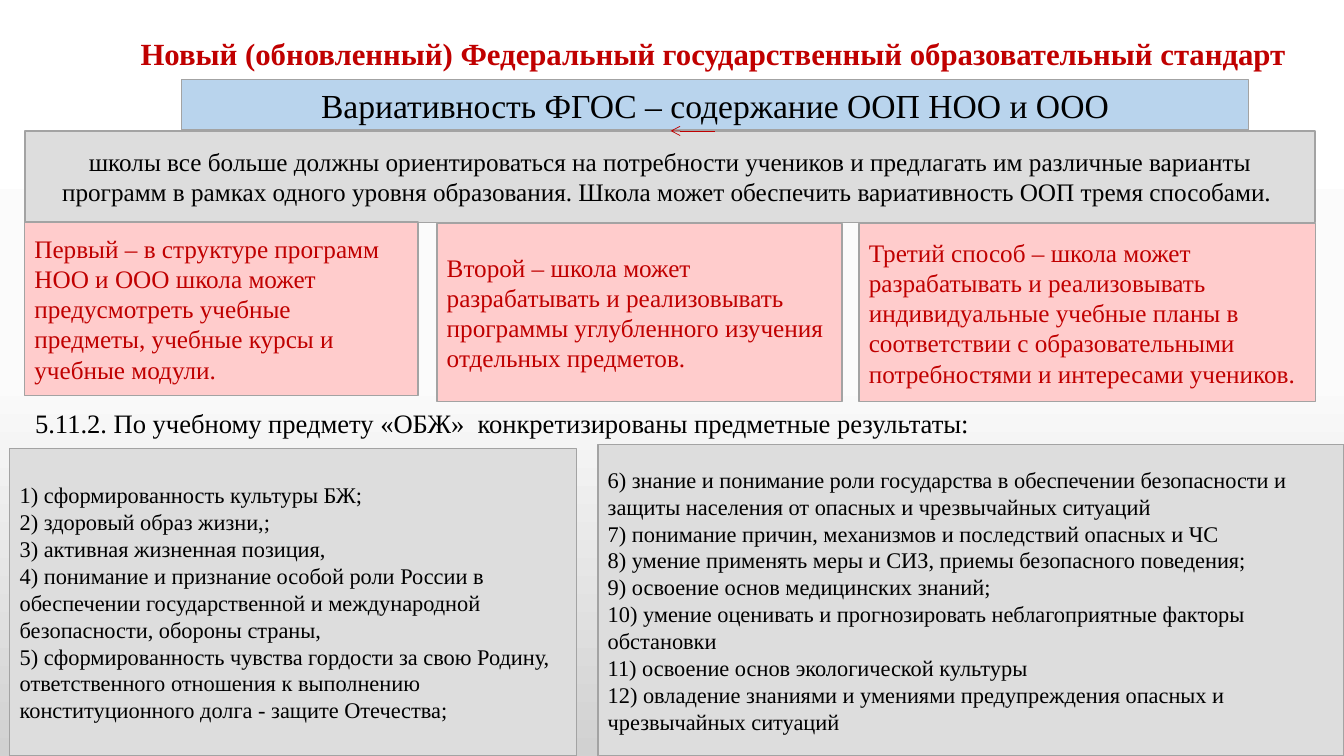
"""Build the slide on variability in the updated federal education standard."""
from copy import deepcopy

from pptx import Presentation
from pptx.dml.color import RGBColor
from pptx.enum.shapes import MSO_CONNECTOR as Connector, MSO_SHAPE as Shape
from pptx.enum.text import MSO_ANCHOR as Anchor, PP_ALIGN as Align
from pptx.oxml.ns import qn
from pptx.util import Pt
from lxml.etree import SubElement

COLORS = {
    "red": "C00000",
    "black": "000000",
    "blue": "B9D4ED",
    "grey": "DDDDDD",
    "pink": "FFCCCC",
    "border": "A3A3A3",
}
BACKGROUND = [(0, "FFFFFF"), (0.5, "FBFBFB"), (1, "D1D1D1")]
FONT = "Times New Roman"


def color(name):
    return RGBColor.from_string(COLORS[name])


def write(box, text, size, ink, align=Align.LEFT, bold=False):
    frame = box.text_frame
    frame.word_wrap = True
    frame.text = text
    for para in frame.paragraphs:
        para.alignment = align
        for span in para.runs:
            span.font.name = FONT
            span.font.size = Pt(size)
            span.font.bold = bold
            span.font.color.rgb = color(ink)


deck = Presentation()
deck.slide_width, deck.slide_height = Pt(960), Pt(540)
page = deck.slides.add_slide(deck.slide_layouts[6])

backdrop = page.background.fill
backdrop.gradient()
backdrop.gradient_angle = 270
stop_list = page.element.find(".//" + qn("a:gsLst"))
stop_list.insert(1, deepcopy(stop_list[0]))
for stop, (position, tint) in zip(backdrop.gradient_stops, BACKGROUND):
    stop.position = position
    stop.color.rgb = RGBColor.from_string(tint)

title = page.shapes.add_textbox(Pt(79), Pt(21), Pt(860.5), Pt(34))
write(title, "Новый (обновленный) Федеральный государственный образовательный стандарт",
      22, "red", Align.CENTER, True)

heading = page.shapes.add_textbox(Pt(18), Pt(287.5), Pt(921), Pt(30))
write(heading, "5.11.2. По учебному предмету «ОБЖ»  конкретизированы предметные результаты:",
      19, "black")

results_left = """1) сформированность культуры БЖ;
2) здоровый образ жизни,;
3) активная жизненная позиция,
4) понимание и признание особой роли России в обеспечении государственной и международной безопасности, обороны страны,
5) сформированность чувства гордости за свою Родину, ответственного отношения к выполнению конституционного долга - защите Отечества;"""
results_right = """6) знание и понимание роли государства в обеспечении безопасности и защиты населения от опасных и чрезвычайных ситуаций
7) понимание причин, механизмов и последствий опасных и ЧС
8) умение применять меры и СИЗ, приемы безопасного поведения;
9) освоение основ медицинских знаний;
10) умение оценивать и прогнозировать неблагоприятные факторы обстановки
11) освоение основ экологической культуры
12) овладение знаниями и умениями предупреждения опасных и чрезвычайных ситуаций"""

panels = [
    (129.5, 57, 762.5, 36, "blue", "black", 24, Align.CENTER,
     "Вариативность ФГОС – содержание ООП НОО и ООО"),
    (18, 93.5, 921.5, 65.5, "grey", "black", 18, Align.CENTER,
     "школы все больше должны ориентироваться на потребности учеников и предлагать им "
     "различные варианты программ в рамках одного уровня образования. Школа может "
     "обеспечить вариативность ООП тремя способами. "),
    (7, 320.5, 405, 219.5, "grey", "black", 16, Align.LEFT, results_left),
    (17.5, 158.5, 281, 124, "pink", "red", 18, Align.LEFT,
     "Первый – в структуре программ НОО и ООО школа может предусмотреть учебные "
     "предметы, учебные курсы и учебные модули."),
    (312, 159.5, 289.5, 127.5, "pink", "red", 18, Align.LEFT,
     "Второй – школа может разрабатывать и реализовывать программы углубленного "
     "изучения отдельных предметов."),
    (613.5, 159.5, 326, 127.5, "pink", "red", 18, Align.LEFT,
     "Третий способ – школа может разрабатывать и реализовывать индивидуальные учебные "
     "планы в соответствии с образовательными потребностями и интересами учеников."),
    (427, 317.5, 533, 222.5, "grey", "black", 16, Align.LEFT, results_right),
]
for left, top, width, height, fill, ink, size, align, text in panels:
    panel = page.shapes.add_shape(Shape.RECTANGLE, Pt(left), Pt(top), Pt(width), Pt(height))
    panel.shadow.inherit = False
    panel.fill.solid()
    panel.fill.fore_color.rgb = color(fill)
    panel.line.color.rgb = color("border")
    panel.line.width = Pt(1)
    panel.text_frame.vertical_anchor = Anchor.MIDDLE
    write(panel, text, size, ink, align)

arrow = page.shapes.add_connector(Connector.STRAIGHT, Pt(510.5), Pt(93.5), Pt(479), Pt(93.5))
arrow.line.color.rgb = color("red")
arrow.line.width = Pt(0.5)
SubElement(arrow.line._get_or_add_ln(), qn("a:tailEnd"), type="arrow")
SubElement(arrow._element.spPr, qn("a:effectLst"))

deck.save("out.pptx")
